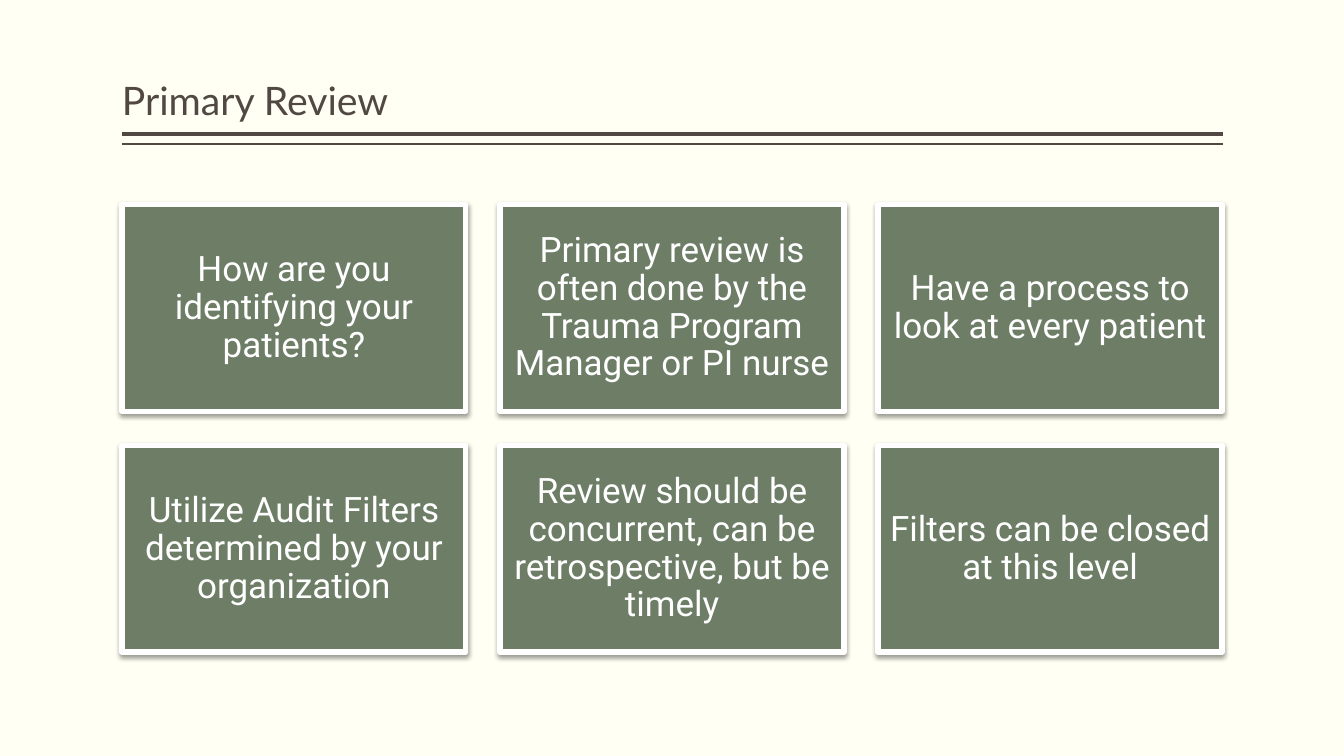
import pptx
import pptx.util
import pptx.dml.color
import pptx.enum.shapes
import pptx.enum.text
import pptx.oxml
import pptx.oxml.ns

Inches, Pt = pptx.util.Inches, pptx.util.Pt
RGBColor = pptx.dml.color.RGBColor
ANCHOR = pptx.enum.text.MSO_ANCHOR
ALIGN = pptx.enum.text.PP_ALIGN

CREAM = RGBColor(0xFF, 0xFF, 0xF3)
BROWN = RGBColor(0x51, 0x48, 0x43)
GREEN = RGBColor(0x6D, 0x7D, 0x66)
WHITE = RGBColor(0xFF, 0xFF, 0xFF)

TITLE = "Primary Review"
CARDS = [
    "How are you identifying your patients?",
    "Primary review is often done by the Trauma Program Manager or PI nurse",
    "Have a process to look at every patient",
    "Utilize Audit Filters determined by your organization",
    "Review should be concurrent, can be retrospective, but be timely",
    "Filters can be closed at this level",
]
RULES = [(1.33, 3), (1.43, 1)]

LEFT, WIDTH = 1.21, 10.92
COLUMNS = 3
CARD_TOP, CARD_W, CARD_H = 2.03, 3.41, 2.05
STEP_X, STEP_Y = 3.75, 2.39

SHADOW = (
    '<a:outerShdw %s blurRad="%d" dist="%d" dir="5400000" algn="ctr" rotWithShape="0">'
    '<a:srgbClr val="000000"><a:alpha val="38000"/></a:srgbClr></a:outerShdw>'
    % (pptx.oxml.ns.nsdecls("a"), Pt(3.5), Pt(2))
)


def set_text(sp, text, *, font, size, color, align, anchor, inset_x, inset_y):
    tf = sp.text_frame
    tf.word_wrap = True
    tf.vertical_anchor = anchor
    tf.margin_left = tf.margin_right = Inches(inset_x)
    tf.margin_top = tf.margin_bottom = Inches(inset_y)
    p = tf.paragraphs[0]
    p.alignment = align
    p.line_spacing = 0.9
    r = p.add_run()
    r.text = text
    r.font.name = font
    r.font.size = Pt(size)
    r.font.color.rgb = color


def add_rule(s, y, weight):
    line = s.shapes.add_connector(
        pptx.enum.shapes.MSO_CONNECTOR.STRAIGHT,
        Inches(LEFT), Inches(y), Inches(LEFT + WIDTH), Inches(y))
    line.line.color.rgb = BROWN
    line.line.width = Pt(weight)
    line._element.spPr.append(
        pptx.oxml.parse_xml("<a:effectLst %s/>" % pptx.oxml.ns.nsdecls("a")))


def add_card(s, index, text):
    row, col = divmod(index, COLUMNS)
    sp = s.shapes.add_shape(
        pptx.enum.shapes.MSO_SHAPE.RECTANGLE,
        Inches(LEFT + col * STEP_X), Inches(CARD_TOP + row * STEP_Y),
        Inches(CARD_W), Inches(CARD_H))
    sp.fill.solid()
    sp.fill.fore_color.rgb = GREEN
    sp.line.color.rgb = WHITE
    sp.line.width = Pt(3.82)
    sp.shadow.inherit = False
    effects = sp._element.spPr.find(pptx.oxml.ns.qn("a:effectLst"))
    effects.append(pptx.oxml.parse_xml(SHADOW))
    set_text(sp, text, font="Roboto", size=25, color=WHITE, align=ALIGN.CENTER,
             anchor=ANCHOR.MIDDLE, inset_x=0.1, inset_y=0.1)


def main():
    prs = pptx.Presentation()
    prs.slide_width, prs.slide_height = Inches(13.33), Inches(7.5)
    s = prs.slides.add_slide(prs.slide_layouts[6])
    s.background.fill.solid()
    s.background.fill.fore_color.rgb = CREAM

    for y, weight in RULES:
        add_rule(s, y, weight)
    title = s.shapes.add_textbox(Inches(LEFT), Inches(0.08), Inches(WIDTH), Inches(1.2))
    set_text(title, TITLE, font="Lato", size=28, color=BROWN, align=ALIGN.LEFT,
             anchor=ANCHOR.BOTTOM, inset_x=0, inset_y=0.05)
    for index, text in enumerate(CARDS):
        add_card(s, index, text)

    prs.save("out.pptx")


if __name__ == "__main__":
    main()
